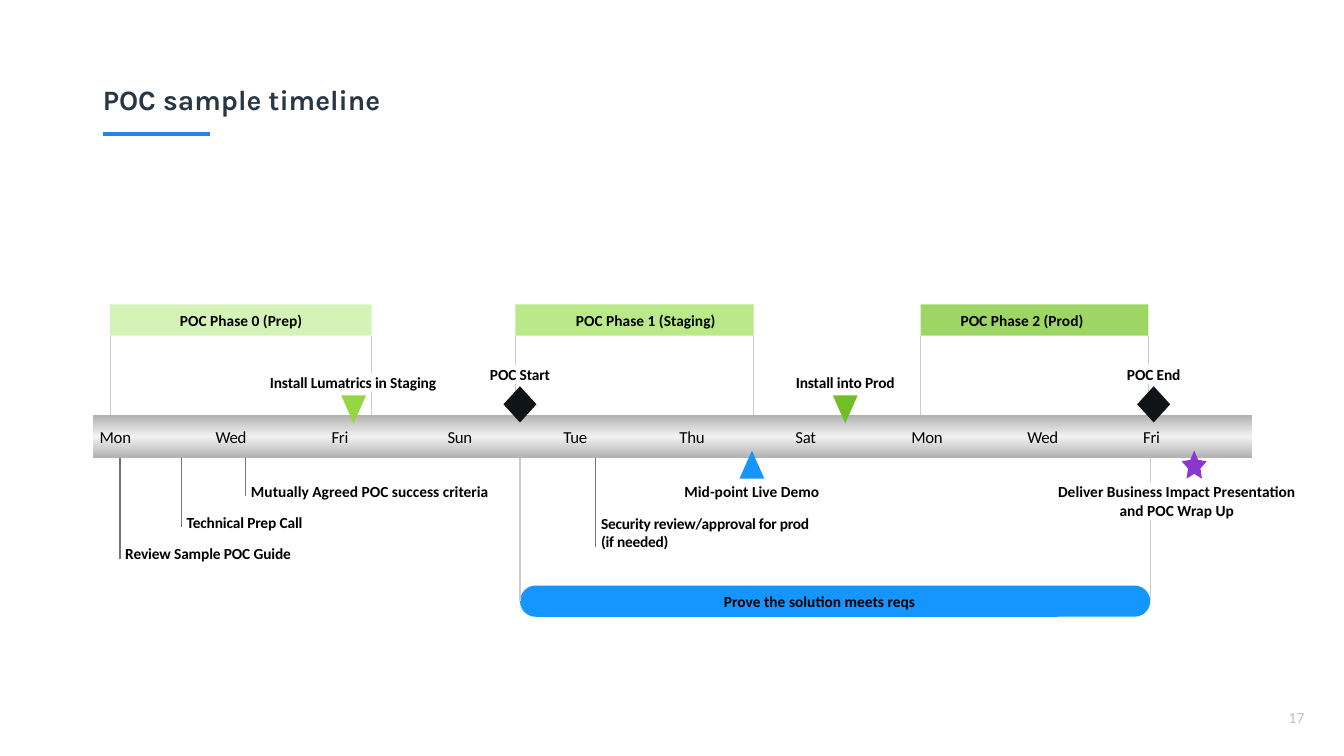
from copy import deepcopy
from dataclasses import dataclass

from lxml.etree import SubElement as Sub
from pptx import Presentation
from pptx.dml.color import RGBColor as Rgb
from pptx.enum.shapes import MSO_CONNECTOR as Link, MSO_SHAPE as Kind
from pptx.enum.text import MSO_ANCHOR as Anchor, PP_ALIGN as Align
from pptx.oxml.ns import qn
from pptx.util import Inches, Pt


@dataclass(frozen=True)
class Theme:
    face: str = "Calibri"
    head: str = "Karla"
    ink: str = "000000"
    title: str = "293745"
    rule: str = "2583EE"
    page: str = "BFBFBF"
    pale: str = "CCCCCC"
    dark: str = "737373"
    blue: str = "1495FF"
    black: str = "0F1419"
    white: str = "FFFFFF"
    edge: str = "B2B2B2"
    core: str = "F2F2F2"
    big: int = 20
    mid: int = 12
    small: int = 11


T = Theme()
COL, ROW = 0.575, 0.31
LEFT, BASE = 0.92, 4.47
TOP, FOOT = -1.13, 0.23
LINE = 0.61

PHASES = [
    (0.3, 4.51, 2.56, "POC Phase 0 (Prep)", "D5F3B7"),
    (7.29, 4.11, 9.54, "POC Phase 1 (Staging)", "B9E988"),
    (14.28, 3.93, 16.03, "POC Phase 2 (Prod)", "9DD664"),
]
GAPS = {(0, 1): (-2.48, -1.87), (1, 0): (-2.74, -2.13)}
DAYS = ["Mon", "Wed", "Fri", "Sun", "Tue", "Thu", "Sat", "Mon", "Wed", "Fri"]
NOTES = [
    (0.47, 3, "Review Sample POC Guide", -10),
    (1.53, 2, "Technical Prep Call", -10),
    (2.64, 1, "Mutually Agreed POC success criteria", 0),
    (8.68, 2, "Security review/approval for prod\n(if needed)", -20),
]
CALLS = [
    (4.49, -2.48, 3.3, "Install Lumatrics in Staging", -10, None),
    (7.37, -2.74, 1.2, "POC Start", -10, None),
    (12.98, -2.48, 2, "Install into Prod", -10, None),
    (18.3, -2.74, 1, "POC End", -10, T.white),
    (11.37, 1, 2.6, "Mid-point Live Demo", 0, None),
    (18.7, 1, 4.2, "Deliver Business Impact Presentation\nand POC Wrap Up", 0, T.white),
    (12.54, 4.52, 4, "Prove the solution meets reqs", 0, None),
]
SMALL, LARGE = (0.43, 0.9), (0.57, 1.16)
MARKS = [
    (Kind.ISOSCELES_TRIANGLE, 4.5, -1.77, SMALL, "96D642", 180),
    (Kind.DIAMOND, 7.37, -2.06, LARGE, T.black, 0),
    (Kind.ISOSCELES_TRIANGLE, 12.98, -1.77, SMALL, "73BE28", 180),
    (Kind.DIAMOND, 18.3, -2.06, LARGE, T.black, 0),
    (Kind.ISOSCELES_TRIANGLE, 11.37, 0, SMALL, T.blue, 0),
    (Kind.STAR_5_POINT, 19, 0, SMALL, "8A36D0", 0),
]


def place(col, row, wide, high):
    return (Inches(LEFT + COL * col), Inches(BASE + ROW * row),
            Inches(COL * wide), Inches(ROW * high))


def style(frame, size, tint, face=T.face, bold=False, align=Align.LEFT, track=0, space=None):
    for par in frame.paragraphs:
        par.alignment = align
        if space:
            par.line_spacing = space
        for run in par.runs:
            font = run.font
            font.size, font.name, font.bold = Pt(size), face, bold
            font.color.rgb = Rgb.from_string(tint)
            if track:
                run._r.get_or_add_rPr().set("spc", str(track))


def shape(slide, kind, box, tint):
    item = slide.shapes.add_shape(kind, *place(*box))
    item.shadow.inherit = False
    item.fill.solid()
    item.fill.fore_color.rgb = Rgb.from_string(tint)
    item.line.fill.background()
    return item


def label(slide, box, text, fill=None, wrap=False, **look):
    item = slide.shapes.add_textbox(*place(*box))
    if fill:
        item.fill.solid()
        item.fill.fore_color.rgb = Rgb.from_string(fill)
    frame = item.text_frame
    frame.margin_left = frame.margin_right = frame.margin_top = frame.margin_bottom = 0
    frame.vertical_anchor = Anchor.MIDDLE
    frame.word_wrap = wrap
    frame.text = text
    style(frame, **look)
    return item


def caption(slide, mid, row, wide, text, track=0, fill=None):
    high = LINE * (text.count("\n") + 1)
    label(slide, (mid - wide / 2, row, wide, high), text, fill, size=T.small,
          tint=T.ink, bold=True, align=Align.CENTER, track=track)


def rule(slide, start, end, tint, width=0.75):
    ends = place(*start, 0, 0)[:2] + place(*end, 0, 0)[:2]
    item = slide.shapes.add_connector(Link.STRAIGHT, *ends)
    item.line.color.rgb = Rgb.from_string(tint)
    item.line.width = Pt(width)
    Sub(item._element.spPr, qn("a:effectLst"))
    return item


def heading(slide):
    item = slide.shapes.title
    item.left, item.top, item.width, item.height = place(0, -13.15, 20, 2.61)
    frame = item.text_frame
    frame.vertical_anchor = Anchor.BOTTOM
    frame.text = "POC sample timeline"
    style(frame, T.big, T.title, T.head, True, space=1.2)
    rule(slide, (0.17, -10.13), (2.03, -10.13), T.rule, 2.25)


def scope(slide):
    pill = shape(slide, Kind.ROUNDED_RECTANGLE, (7.37, 4.32, 10.87, 1), T.blue)
    pill.adjustments[0] = 0.5
    for col, side in ((7.37, 1), (18.24, 3)):
        rule(slide, (col, FOOT), (col, 4.82), T.pale).end_connect(pill, side)


def phase(slide, index):
    left, wide, mid, text, tint = PHASES[index]
    for side, col in enumerate((left, left + wide)):
        stops = [-3.68, *GAPS.get((index, side), ()), TOP]
        for start, end in zip(stops[::2], stops[1::2]):
            rule(slide, (col, start), (col, end), T.pale)
    shape(slide, Kind.RECTANGLE, (left, -4.68, wide, 1), tint)
    caption(slide, mid, -4.48, 3, text)


def band(slide):
    bar = shape(slide, Kind.RECTANGLE, (0, TOP, 20, FOOT - TOP), T.edge)
    bar.fill.gradient()
    bar.fill.gradient_angle = 90
    stops = bar._element.spPr.find(".//" + qn("a:gsLst"))
    stops.insert(1, deepcopy(stops[0]))
    for stop, spot, tint in zip(bar.fill.gradient_stops, (0, 0.5, 1), (T.edge, T.core, T.edge)):
        stop.position = spot
        stop.color.rgb = Rgb.from_string(tint)
    for index, day in enumerate(DAYS):
        label(slide, (0.12 + 2 * index, -0.77, 0.6, 0.65), day, wrap=True,
              size=T.mid, tint=T.ink, track=-20)


def note(slide, col, row, text, track):
    high = LINE * (text.count("\n") + 1)
    rule(slide, (col, FOOT), (col, row + high - 0.15), T.dark)
    label(slide, (col + 0.09, row, 4.4, high), text, wrap=True,
          size=T.small, tint=T.ink, bold=True, track=track)


def mark(slide, kind, mid, row, size, tint, turn):
    wide, high = size
    item = shape(slide, kind, (mid - wide / 2, row, wide, high), tint)
    item.rotation = turn
    if kind == Kind.STAR_5_POINT:
        item.adjustments[0] = 0.25


def main():
    deck = Presentation()
    deck.slide_width, deck.slide_height = Inches(13.33), Inches(7.5)
    slide = deck.slides.add_slide(deck.slide_layouts[5])
    heading(slide)
    scope(slide)
    for index in range(len(PHASES)):
        phase(slide, index)
    band(slide)
    for item in NOTES:
        note(slide, *item)
    for item in CALLS:
        caption(slide, *item)
    for item in MARKS:
        mark(slide, *item)
    label(slide, (20.4, 7.97, 0.5, 1), "17", wrap=True, size=T.small,
          tint=T.page, align=Align.RIGHT, space=1.2)
    deck.save("out.pptx")


if __name__ == "__main__":
    main()
